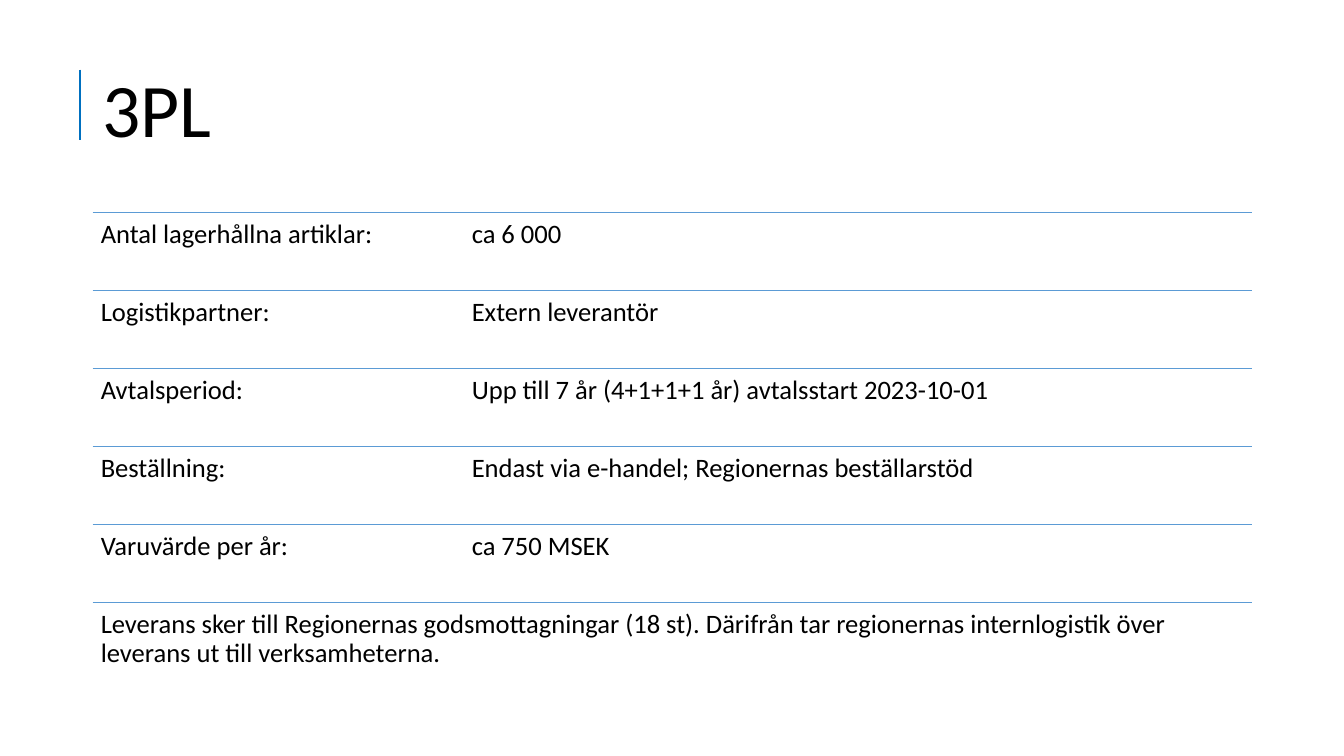
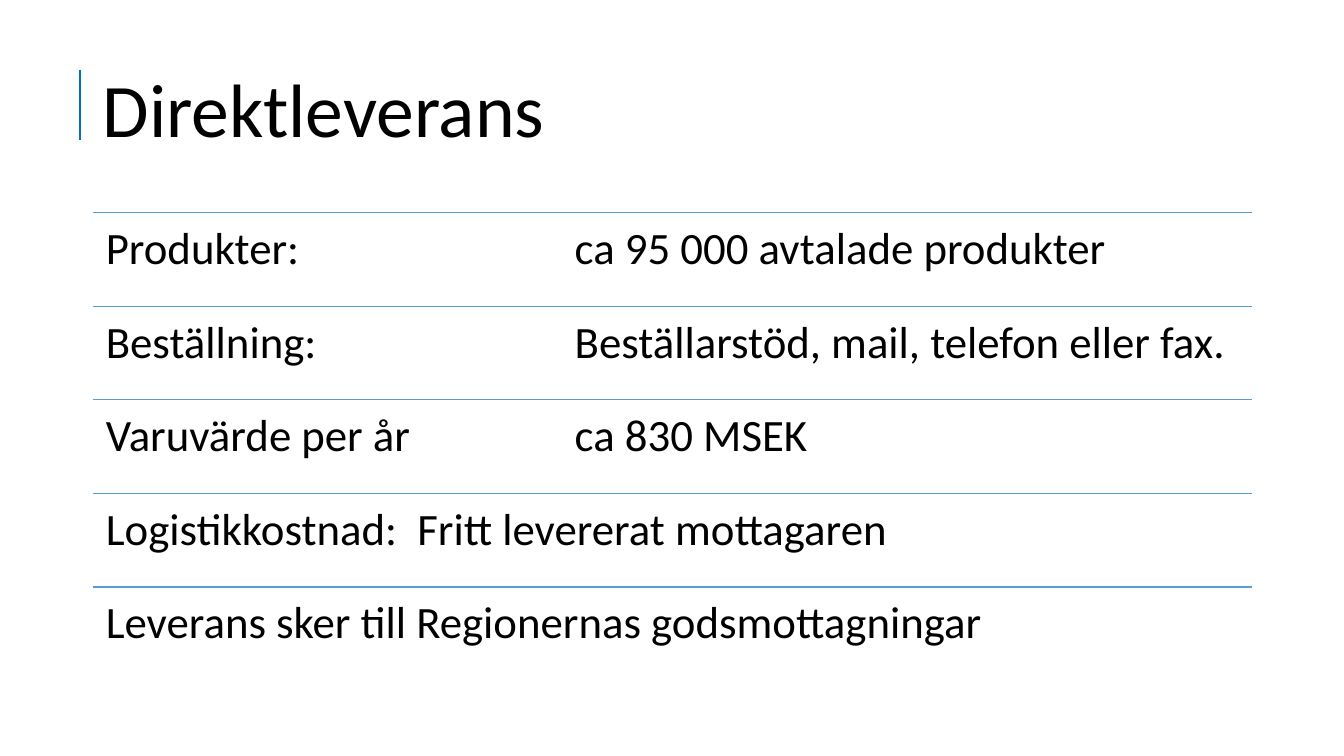
import pptx
import pptx.dml.color
import pptx.enum.shapes
import pptx.enum.text
import pptx.oxml.ns
import pptx.util
from lxml import etree

Inches = pptx.util.Inches
Pt = pptx.util.Pt
RGB = pptx.dml.color.RGBColor
qn = pptx.oxml.ns.qn
ANCHOR = pptx.enum.text.MSO_ANCHOR

COLORS = {"text": "000000", "accent": "0070C0", "rule": "5B9BD5"}
FONT = "Calibri"
LEFT, WIDTH = 0.92, 11.5
LIST_TOP, LIST_HEIGHT = 2.11, 4.64

SLIDES = [
    {
        "title": "3PL",
        "size": 19,
        "inset": 0.08,
        "tab": 3.68,
        "rows": [
            ("Antal lagerhållna artiklar:", "ca 6 000"),
            ("Logistikpartner:", "Extern leverantör"),
            ("Avtalsperiod:", "Upp till 7 år (4+1+1+1 år) avtalsstart 2023-10-01"),
            ("Beställning:", "Endast via e-handel; Regionernas beställarstöd"),
            ("Varuvärde per år:", "ca 750 MSEK"),
            ("Leverans sker till Regionernas godsmottagningar (18 st). "
             "Därifrån tar regionernas internlogistik över leverans ut till verksamheterna.",),
        ],
    },
    {
        "title": "Direktleverans",
        "size": 32,
        "inset": 0.13,
        "tab": 4.65,
        "rows": [
            ("Produkter:", "ca 95 000 avtalade produkter"),
            ("Beställning:", "Beställarstöd, mail, telefon eller fax."),
            ("Varuvärde per år", "ca 830 MSEK"),
            ("Logistikkostnad:", "Fritt levererat mottagaren", 3.09),
            ("Leverans sker till Regionernas godsmottagningar",),
        ],
    },
]


def add_line(s, x1, y1, x2, y2, color, width):
    line = s.shapes.add_connector(
        pptx.enum.shapes.MSO_CONNECTOR.STRAIGHT,
        Inches(x1), Inches(y1), Inches(x2), Inches(y2))
    line.line.color.rgb = RGB.from_string(COLORS[color])
    line.line.width = Pt(width)
    etree.SubElement(line._element.spPr, qn("a:effectLst"))


def add_text(s, y, height, text, size, inset_x, inset_y, anchor, tab=None):
    tf = s.shapes.add_textbox(
        Inches(LEFT), Inches(y), Inches(WIDTH), Inches(height)).text_frame
    frame = {
        "word_wrap": True,
        "vertical_anchor": anchor,
        "margin_left": Inches(inset_x),
        "margin_right": Inches(inset_x),
        "margin_top": Inches(inset_y),
        "margin_bottom": Inches(inset_y),
    }
    for name, value in frame.items():
        setattr(tf, name, value)
    p = tf.paragraphs[0]
    p.line_spacing = 0.9
    if tab:
        tabs = etree.SubElement(p._p.get_or_add_pPr(), qn("a:tabLst"))
        etree.SubElement(tabs, qn("a:tab"), pos=str(Inches(tab)), algn="l")
    r = p.add_run()
    r.text = text
    for name, value in {"name": FONT, "size": Pt(size)}.items():
        setattr(r.font, name, value)
    r.font.color.rgb = RGB.from_string(COLORS["text"])


prs = pptx.Presentation()
prs.slide_width = Inches(13.33)
prs.slide_height = Inches(7.5)

for page in SLIDES:
    s = prs.slides.add_slide(prs.slide_layouts[6])
    add_line(s, 0.79, 0.69, 0.79, 1.39, "accent", 1.5)
    add_text(s, 0.4, 1.45, page["title"], 54, 0.1, 0.05, ANCHOR.MIDDLE)

    row_height = LIST_HEIGHT / len(page["rows"])
    for i, row in enumerate(page["rows"]):
        y = LIST_TOP + i * row_height
        tab = row[2] if len(row) > 2 else page["tab"]
        add_line(s, LEFT, y, LEFT + WIDTH, y, "rule", 1)
        add_text(s, y, row_height, "\t".join(row[:2]), page["size"],
                 page["inset"], page["inset"], ANCHOR.TOP,
                 tab if len(row) > 1 else None)

prs.save("out.pptx")
